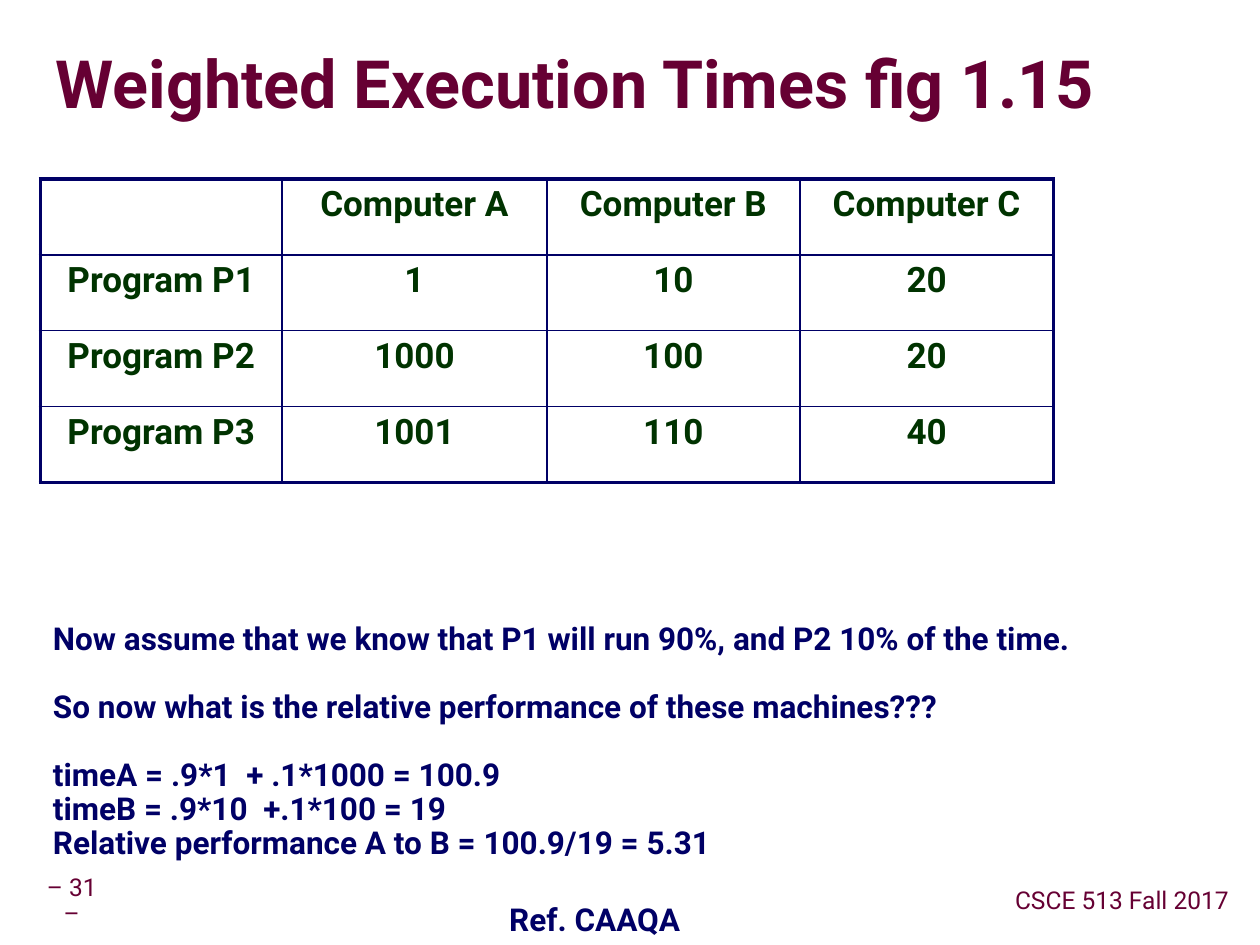
from lxml import etree
from pptx import Presentation
from pptx import util as u
from pptx.dml.color import RGBColor
from pptx.enum import text as t
from pptx.oxml.ns import qn

FONT = "Roboto"
MAROON, NAVY, GREEN, GRAY = "660033", "000066", "003300", "969696"
CENTER, LEFT = t.PP_ALIGN.CENTER, t.PP_ALIGN.LEFT
MIDDLE, TOP = t.MSO_ANCHOR.MIDDLE, t.MSO_ANCHOR.TOP


def color(value):
    return RGBColor.from_string(value)


def write(paragraph, content, size=18, fill=NAVY, bold=True, align=LEFT, spacing=0.9, before=0):
    paragraph.alignment = align
    paragraph.line_spacing = spacing
    if before:
        paragraph.space_before = u.Pt(before)
    run = paragraph.add_run()
    run.text = content
    run.font.name = FONT
    run.font.size = u.Pt(size)
    run.font.bold = bold
    run.font.color.rgb = color(fill)
    return run


def add_frame(slide, box, anchor=TOP, inset=0.05):
    frame = slide.shapes.add_textbox(*map(u.Inches, box)).text_frame
    frame.word_wrap = True
    frame.vertical_anchor = anchor
    frame.margin_left = frame.margin_right = u.Inches(inset)
    frame.margin_top = frame.margin_bottom = u.Inches(min(inset, 0.05))
    return frame


def add_title(slide, box, content):
    frame = add_frame(slide, box, MIDDLE, 0)
    run = write(frame.paragraphs[0], content, size=38, fill=MAROON, spacing=0.87)
    effects = etree.Element(qn("a:effectLst"))
    shadow = etree.SubElement(effects, qn("a:outerShdw"), dist="38100", dir="2700000")
    etree.SubElement(shadow, qn("a:srgbClr"), val=GRAY)
    run.font._element.find(qn("a:solidFill")).addnext(effects)


def set_border(cell, side, width):
    line = etree.Element(qn(f"a:ln{side}"), w=str(u.Pt(width)))
    fill = etree.SubElement(line, qn("a:solidFill"))
    etree.SubElement(fill, qn("a:srgbClr"), val=NAVY)
    return line


def style_cell(cell, outer_sides):
    cell.margin_left = cell.margin_right = u.Inches(0.05)
    cell.margin_top = cell.margin_bottom = u.Inches(0.05)
    cell.fill.background()
    properties = cell._tc.get_or_add_tcPr()
    for position, side in enumerate("LRTB"):
        width = 2.25 if side in outer_sides else 1
        properties.insert(position, set_border(cell, side, width))


def add_times_table(slide, box, rows, column_widths):
    shape = slide.shapes.add_table(len(rows), len(column_widths), *map(u.Inches, box))
    table = shape.table
    table.first_row = table.horz_banding = False
    for column, width in zip(table.columns, column_widths):
        column.width = u.Inches(width)
    last_row, last_column = len(rows) - 1, len(column_widths) - 1
    for row_index, values in enumerate(rows):
        table.rows[row_index].height = u.Inches(box[3] / len(rows))
        for column_index, value in enumerate(values):
            cell = table.cell(row_index, column_index)
            edges = {"L": column_index == 0, "R": column_index == last_column,
                     "T": row_index == 0, "B": row_index == last_row}
            style_cell(cell, [side for side, outer in edges.items() if outer])
            if value:
                write(cell.text_frame.paragraphs[0], value, size=20, fill=GREEN,
                      align=CENTER, spacing=0.95)


def add_explanation(slide, box, lines):
    frame = add_frame(slide, box)
    for index, (content, before) in enumerate(lines):
        paragraph = frame.add_paragraph() if index else frame.paragraphs[0]
        write(paragraph, content, before=before)


def add_label(slide, box, content, inset=0.05, anchor=MIDDLE, **style):
    frame = add_frame(slide, box, anchor, inset)
    write(frame.paragraphs[0], content, align=CENTER, **style)


def main():
    presentation = Presentation()
    presentation.slide_width, presentation.slide_height = u.Inches(10), u.Inches(7.5)
    slide = presentation.slides.add_slide(presentation.slide_layouts[6])
    footer = dict(size=14, fill=MAROON, bold=False)
    add_label(slide, (0.24, 7, 0.66, 0.31), "– 31 –", inset=0.1, **footer)
    add_label(slide, (7.96, 7, 1.89, 0.31), "CSCE 513 Fall 2017", **footer)
    add_title(slide, (0.44, 0.27, 9.53, 0.85), "Weighted Execution Times fig 1.15")
    rows = [
        ("", "Computer A", "Computer B", "Computer C"),
        ("Program P1", "1", "10", "20"),
        ("Program P2", "1000", "100", "20"),
        ("Program P3", "1001", "110", "40"),
    ]
    add_times_table(slide, (0.32, 1.42, 8.05, 2.41), rows, (1.92, 2.1, 2.01, 2.01))
    gap = 19.4
    lines = [
        ("Now assume that we know that P1 will run 90%, and P2 10% of the time.", 0),
        ("So now what is the relative performance of these machines???", gap),
        ("timeA = .9*1  + .1*1000 = 100.9", gap),
        ("timeB = .9*10  +.1*100 = 19", 0),
        ("Relative performance A to B = 100.9/19 = 5.31", 0),
    ]
    add_explanation(slide, (0.37, 4.9, 8.62, 2), lines)
    add_label(slide, (3.88, 7.13, 1.68, 0.37), "Ref. CAAQA", anchor=TOP)
    presentation.save("out.pptx")


if __name__ == "__main__":
    main()
